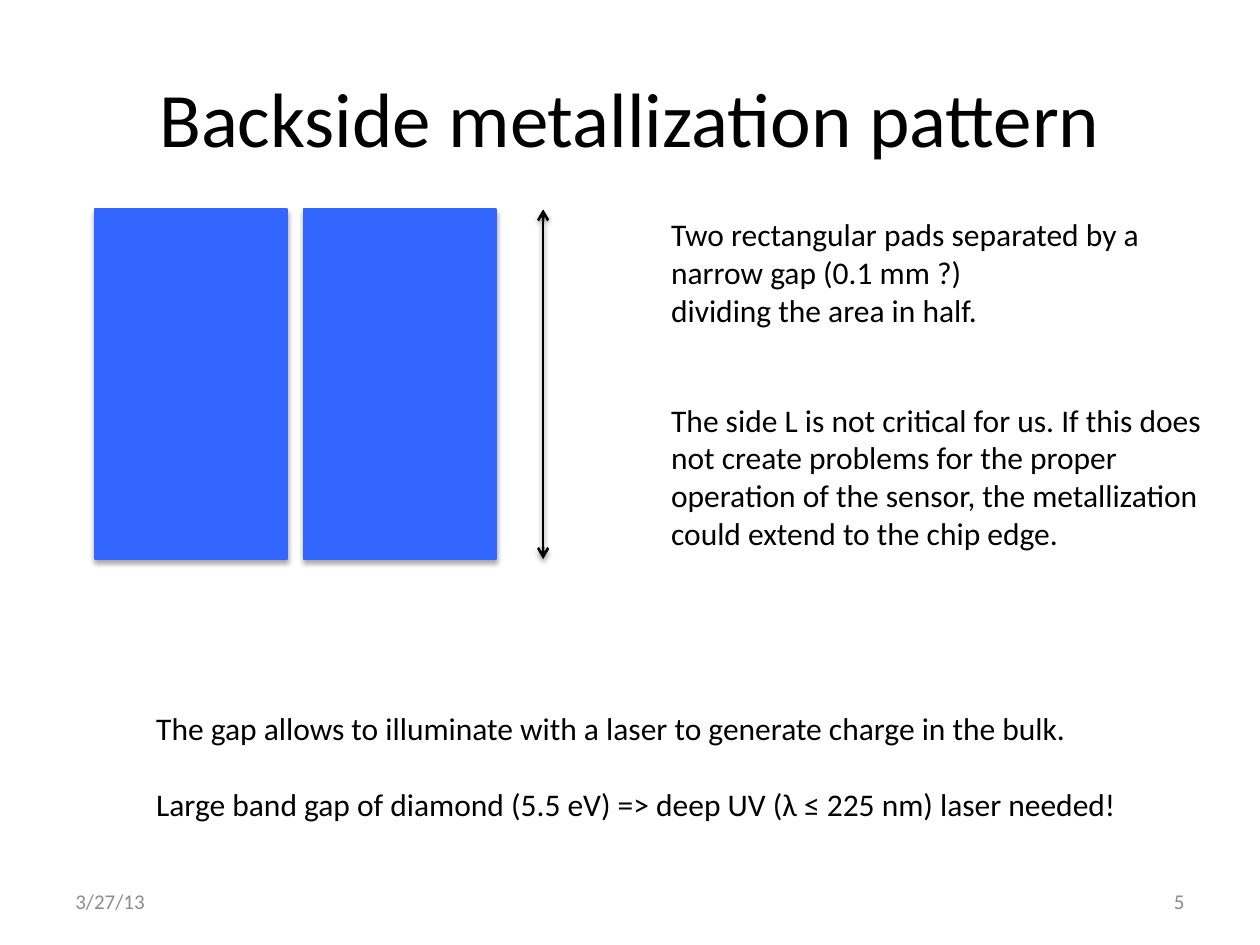
from lxml import etree
from pptx import Presentation
from pptx.dml.color import RGBColor
from pptx.enum.shapes import MSO_CONNECTOR, MSO_SHAPE
from pptx.enum.text import MSO_ANCHOR, PP_ALIGN
from pptx.oxml.ns import qn
from pptx.util import Cm, Pt

RECTANGLE = MSO_SHAPE.RECTANGLE
STRAIGHT = MSO_CONNECTOR.STRAIGHT
TOP, MIDDLE = MSO_ANCHOR.TOP, MSO_ANCHOR.MIDDLE
LEFT, CENTER, RIGHT = PP_ALIGN.LEFT, PP_ALIGN.CENTER, PP_ALIGN.RIGHT
BLACK = RGBColor(0x00, 0x00, 0x00)
GRAY = RGBColor(0x8C, 0x8C, 0x8C)
BLUE = RGBColor(0x33, 0x66, 0xFF)


def write_text(box, *lines, size=18, color=BLACK, align=LEFT, anchor=TOP, wrap=True, gap=0):
    frame = box.text_frame
    frame.word_wrap = wrap
    frame.vertical_anchor = anchor
    for index, line in enumerate(lines):
        para = frame.add_paragraph() if index else frame.paragraphs[0]
        para.alignment = align
        para.space_before = Pt(gap if index else 0)
        span = para.add_run()
        span.text = line
        span.font.name = "Calibri"
        span.font.size = Pt(size)
        span.font.color.rgb = color


def add_shadow(effects, opacity, distance):
    shadow = etree.SubElement(effects, qn("a:outerShdw"), blurRad=str(Pt(3.1)),
                              dist=str(Pt(distance)), dir="5400000", rotWithShape="0")
    color = etree.SubElement(shadow, qn("a:srgbClr"), val=str(BLACK))
    etree.SubElement(color, qn("a:alpha"), val=str(opacity * 1000))


deck = Presentation()
deck.slide_width, deck.slide_height = Cm(25.4), Cm(19.05)
page = deck.slides.add_slide(deck.slide_layouts[5])

title = page.shapes.title
title.left, title.top, title.width, title.height = Cm(1.27), Cm(0.76), Cm(22.86), Cm(3.18)
write_text(title, "Backside metallization pattern", size=44, align=CENTER, anchor=MIDDLE)

pad_top, pad_height = Cm(4.22), Cm(7.05)
for pad_left in (1.91, 6.12):
    pad = page.shapes.add_shape(RECTANGLE, Cm(pad_left), pad_top, Cm(3.88), pad_height)
    pad.fill.solid()
    pad.fill.fore_color.rgb = BLUE
    pad.line.color.rgb = BLUE
    pad.line.width = Pt(1)
    pad.shadow.inherit = False
    add_shadow(pad.element.spPr.find(qn("a:effectLst")), 35, 1.8)

side_arrow = page.shapes.add_connector(STRAIGHT, Cm(10.95), pad_top, Cm(10.95), pad_top + pad_height)
side_arrow.line.color.rgb = BLACK
side_arrow.line.width = Pt(1.5)
outline = side_arrow.line._get_or_add_ln()
for end in ("a:headEnd", "a:tailEnd"):
    etree.SubElement(outline, qn(end), type="arrow")
add_shadow(etree.SubElement(side_arrow._element.spPr, qn("a:effectLst")), 38, 1.6)

notes = [
    (13.28, 4.22, 10.77, 3.33, {},
     ["Two rectangular pads separated by a narrow gap (0.1 mm ?)",
      "dividing the area in half."]),
    (13.28, 7.95, 11.33, 3.33, {},
     ["The side L is not critical for us. If this does not create problems for the proper "
      "operation of the sensor, the metallization could extend to the chip edge."]),
    (2.9, 14.17, 20.09, 2.57, {"wrap": False, "gap": 22},
     ["The gap allows to illuminate with a laser to generate charge in the bulk.",
      "Large band gap of diamond (5.5 eV) => deep UV (λ ≤ 225 nm) laser needed!"]),
    (1.27, 17.65, 5.92, 1.02, {"size": 12, "color": GRAY, "anchor": MIDDLE}, ["3/27/13"]),
    (18.21, 17.65, 5.92, 1.02,
     {"size": 12, "color": GRAY, "anchor": MIDDLE, "align": RIGHT}, ["5"]),
]
for left, top, width, height, style, lines in notes:
    box = page.shapes.add_textbox(Cm(left), Cm(top), Cm(width), Cm(height))
    write_text(box, *lines, **style)

deck.save("out.pptx")
